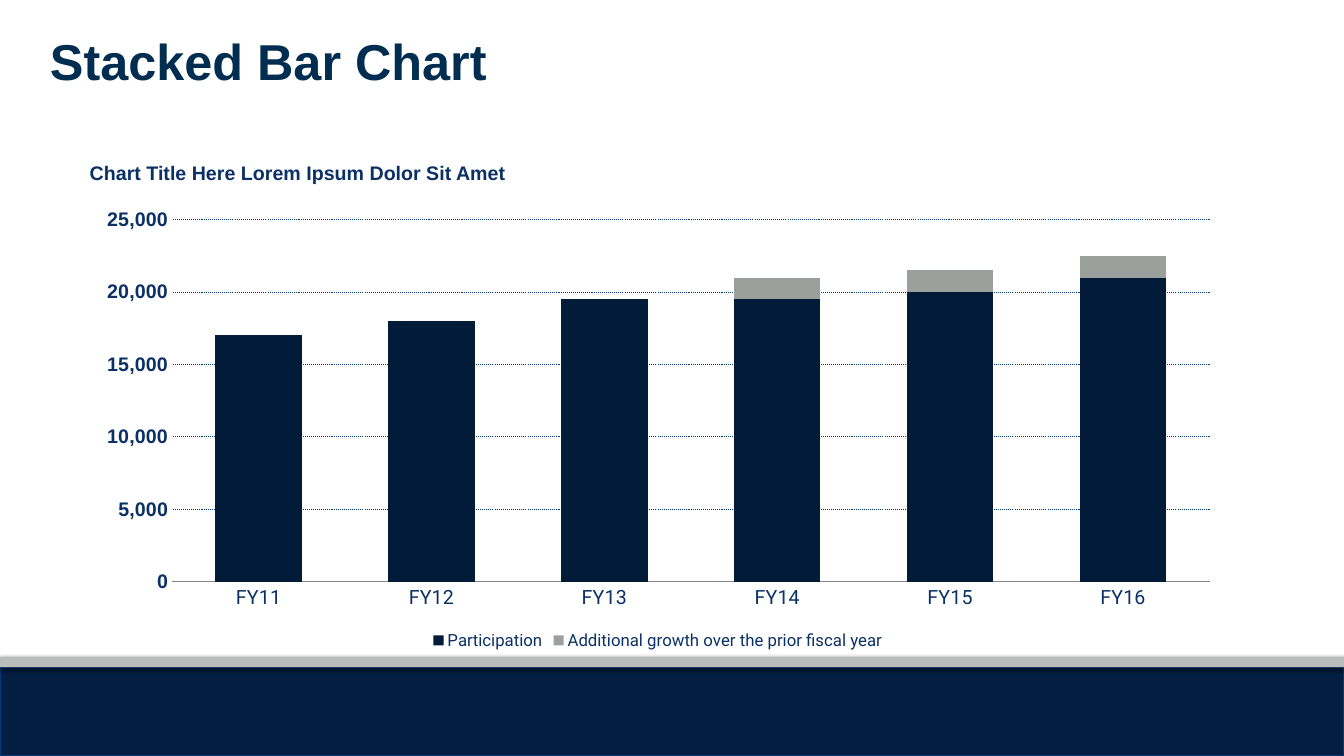
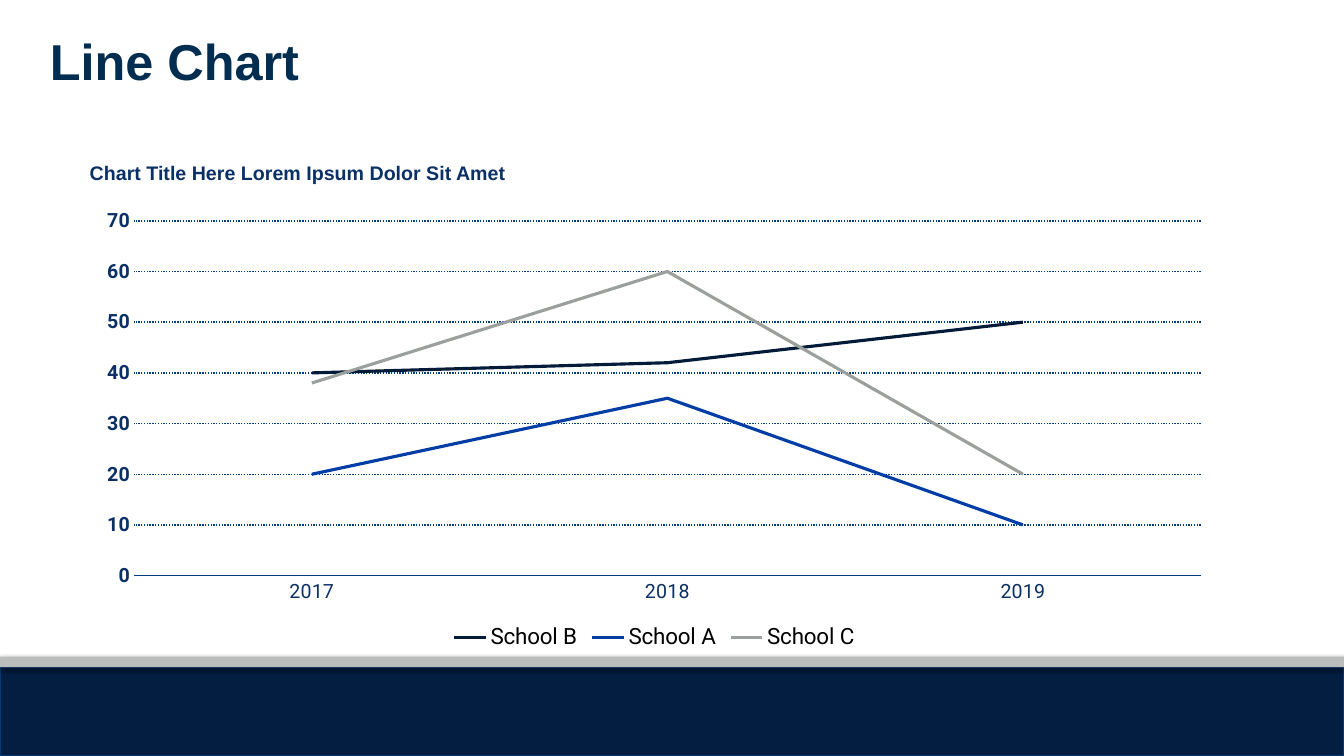
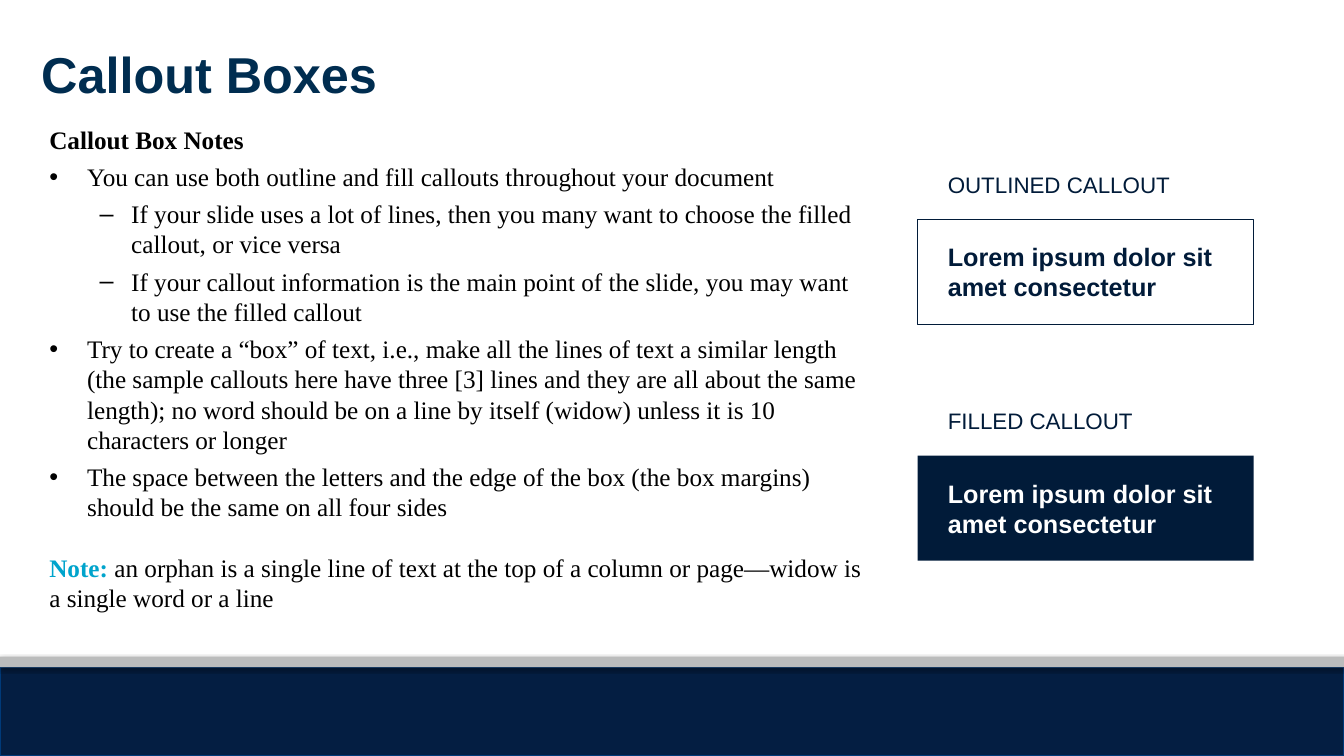
from dataclasses import dataclass, field

from lxml import etree
from pptx import Presentation
from pptx.chart.data import CategoryChartData
from pptx.dml.color import RGBColor
from pptx.enum.chart import XL_CHART_TYPE, XL_LEGEND_POSITION, XL_MARKER_STYLE, XL_TICK_MARK
from pptx.enum.dml import MSO_LINE
from pptx.enum.shapes import MSO_SHAPE
from pptx.enum.text import MSO_ANCHOR, MSO_AUTO_SIZE, PP_ALIGN
from pptx.oxml import parse_xml
from pptx.oxml.ns import nsdecls, qn
from pptx.util import Pt

STACK = XL_CHART_TYPE.COLUMN_STACKED
LINE = XL_CHART_TYPE.LINE
BOTTOM = XL_LEGEND_POSITION.BOTTOM
UNMARKED = XL_MARKER_STYLE.NONE
NO_TICK = XL_TICK_MARK.NONE
DOTS = MSO_LINE.ROUND_DOT
RECT = MSO_SHAPE.RECTANGLE
TOP = MSO_ANCHOR.TOP
MIDDLE = MSO_ANCHOR.MIDDLE
FIXED = MSO_AUTO_SIZE.NONE
LEFT = PP_ALIGN.LEFT

INK = "011B39"
NAVY = "041E42"
EDGE = "003A79"
SILVER = "BBBCBC"
GRAY = "9CA09C"
BLUE = "003DA5"
GRID = "003D81"
LABEL = "0B3066"
BLACK = "000000"
WHITE = "FFFFFF"


@dataclass
class Box:
    left: float
    top: float
    width: float
    height: float

    def place(self) -> tuple:
        return Pt(self.left), Pt(self.top), Pt(self.width), Pt(self.height)


@dataclass
class Look:
    size: float
    face: str
    hue: str
    bold: bool = False


@dataclass
class Band:
    box: Box
    fill: str
    edge: str | None = None


@dataclass
class Series:
    name: str
    vals: tuple
    hue: str


@dataclass
class Graph:
    title: str
    kind: int
    frame: Box
    plot: Box
    cats: tuple
    series: list[Series]
    first: int
    peak: int
    step: int
    base: str
    grid: float
    scale: Look
    legend: Look


@dataclass
class Item:
    text: str
    mark: str = ""
    level: int = 0
    indent: float = 0
    hang: float = 0
    before: float = 0
    look: Look = field(default_factory=lambda: NOTE)


@dataclass
class Callout:
    label: str
    top: float
    fill: str | None
    edge: str | None
    hue: str


HEAD = Look(36, "Arial", "002D50", True)
CAPTION = Look(14, "Arial", LABEL, True)
NOTE = Look(18, "Times New Roman", BLACK)
NOTE_HEAD = Look(18, "Times New Roman", BLACK, True)
NOTE_CUE = Look(18, "Times New Roman", "00A4CC", True)
AXIS = Look(14, "Roboto", LABEL)
HEAD_BOX = Box(28.5, 18, 864, 83)
CAPTION_BOX = Box(57, 111.5, 566.5, 24.5)

BANDS = [
    Band(Box(0, 476.5, 960, 63.5), NAVY, EDGE),
    Band(Box(0, 469, 960, 7.5), SILVER),
]

GRAPHS = [
    Graph(
        "Stacked Bar Chart", STACK, Box(60, 142.5, 820, 325),
        Box(123, 157, 741, 258.5),
        ("FY11", "FY12", "FY13", "FY14", "FY15", "FY16"),
        [
            Series("Participation", (17000, 18000, 19500, 19500, 20000, 21000), INK),
            Series("Additional growth over the prior fiscal year",
                   (None, None, None, 1500, 1500, 1500), GRAY),
        ],
        0, 25000, 5000, "868686", 0.75,
        Look(14, "Arial", LABEL, True), Look(12, "Roboto", LABEL),
    ),
    Graph(
        "Line Chart", LINE, Box(60, 142.5, 814.5, 325),
        Box(95.75, 157.75, 762, 253.5),
        ("2017", "2018", "2019"),
        [
            Series("School A", (20, 35, 10), BLUE),
            Series("School B", (40, 42, 50), INK),
            Series("School C", (38, 60, 20), GRAY),
        ],
        1, 70, 10, GRID, 1,
        Look(14, "Roboto", LABEL, True), Look(16, "Roboto", BLACK),
    ),
]


def bullet(text: str) -> Item:
    return Item(text, "•", 0, 27, -27, 5)


def dash(text: str) -> Item:
    return Item(text, "–", 1, 58.5, -22.5, 5)


ITEMS = [
    Item("Callout Box Notes", look=NOTE_HEAD),
    bullet("You can use both outline and fill callouts throughout your document"),
    dash("If your slide uses a lot of lines, then you many want to choose the filled "
         "callout, or vice versa"),
    dash("If your callout information is the main point of the slide, you may want "
         "to use the filled callout"),
    bullet("Try to create a “box” of text, i.e., make all the lines of text a similar "
           "length (the sample callouts here have three [3] lines and they are all about "
           "the same length); no word should be on a line by itself (widow) unless it is "
           "10 characters or longer"),
    bullet("The space between the letters and the edge of the box (the box margins) "
           "should be the same on all four sides"),
    Item("Note: ", before=21.5, look=NOTE_CUE),
]
NOTE_TAIL = ("an orphan is a single line of text at the top of a column or page—widow is "
             "a single word or a line")

CALLOUTS = [
    Callout("OUTLINED CALLOUT", 113.5, None, INK, INK),
    Callout("FILLED CALLOUT", 282.5, INK, None, WHITE),
]


def tone(code: str) -> RGBColor:
    return RGBColor.from_string(code)


def style(font, look: Look) -> None:
    font.size = Pt(look.size)
    font.name = look.face
    font.bold = look.bold
    font.color.rgb = tone(look.hue)


def settle(shape, box: Box) -> None:
    shape.left, shape.top, shape.width, shape.height = box.place()


def stroke(line, code: str | None, width: float = 0.75) -> None:
    if code is None:
        line.fill.background()
        return
    line.color.rgb = tone(code)
    line.width = Pt(width)


def add_rect(slide, box: Box, fill: str | None, edge: str | None):
    shape = slide.shapes.add_shape(RECT, *box.place())
    shape.shadow.inherit = False
    if fill is None:
        shape.fill.background()
    else:
        shape.fill.solid()
        shape.fill.fore_color.rgb = tone(fill)
    stroke(shape.line, edge)
    return shape


def write(shape, text: str, look: Look, anchor=TOP) -> None:
    frame = shape.text_frame
    frame.word_wrap = True
    frame.auto_size = FIXED
    frame.vertical_anchor = anchor
    frame.text = text
    para = frame.paragraphs[0]
    para.alignment = LEFT
    style(para.runs[0].font, look)


def add_bands(deck, slide) -> None:
    tree = deck.slide_master.shapes.element
    for rank, band in enumerate(BANDS):
        node = add_rect(slide, band.box, band.fill, band.edge).element
        node.nvSpPr.cNvPr.set("id", str(20 + rank))
        glow = node.spPr.find(qn("a:effectLst"))
        glow.append(parse_xml(
            f'<a:outerShdw {nsdecls("a")} blurRad="{Pt(3.1)}" dist="{Pt(1.8)}" '
            'dir="5400000" rotWithShape="0"><a:srgbClr val="000000">'
            '<a:alpha val="35000"/></a:srgbClr></a:outerShdw>'))
        tree.insert(2 + rank, node)


def pin_plot(chart, frame: Box, plot: Box) -> None:
    area = chart.element.find(".//" + qn("c:plotArea"))
    for old in area.findall(qn("c:layout")):
        area.remove(old)
    layout = etree.Element(qn("c:layout"))
    manual = etree.SubElement(layout, qn("c:manualLayout"))
    parts = {
        "layoutTarget": "inner", "xMode": "edge", "yMode": "edge",
        "x": (plot.left - frame.left) / frame.width,
        "y": (plot.top - frame.top) / frame.height,
        "w": plot.width / frame.width,
        "h": plot.height / frame.height,
    }
    for name, value in parts.items():
        etree.SubElement(manual, qn("c:" + name)).set("val", str(value))
    area.insert(0, layout)


def lead_with(chart, rank: int) -> None:
    nodes = list(chart.element.iter(qn("c:ser")))
    if rank:
        nodes[0].addprevious(nodes[rank])


def add_graph(slide, graph: Graph) -> None:
    data = CategoryChartData(number_format="General")
    data.categories = graph.cats
    for row in graph.series:
        data.add_series(row.name, row.vals)
    chart = slide.shapes.add_chart(graph.kind, *graph.frame.place(), data).chart
    style(chart.font, Look(18, "Calibri", BLACK))
    chart.has_title = False
    chart.has_legend = True
    chart.legend.position = BOTTOM
    chart.legend.include_in_layout = False
    style(chart.legend.font, graph.legend)

    for axis, look in ((chart.category_axis, AXIS), (chart.value_axis, graph.scale)):
        axis.major_tick_mark = axis.minor_tick_mark = NO_TICK
        style(axis.tick_labels.font, look)
    stroke(chart.category_axis.format.line, graph.base)
    scale = chart.value_axis
    stroke(scale.format.line, None)
    scale.minimum_scale = 0
    scale.maximum_scale = graph.peak
    scale.major_unit = graph.step
    scale.tick_labels.number_format = "#,##0"
    scale.tick_labels.number_format_is_linked = False
    scale.has_major_gridlines = True
    rule = scale.major_gridlines.format.line
    stroke(rule, GRID, graph.grid)
    rule.dash_style = DOTS

    plot = chart.plots[0]
    plot.vary_by_categories = False
    if graph.kind == STACK:
        plot.gap_width = 100
        plot.overlap = 100
    for drawn, row in zip(plot.series, graph.series):
        if graph.kind == STACK:
            drawn.format.fill.solid()
            drawn.format.fill.fore_color.rgb = tone(row.hue)
        else:
            drawn.smooth = False
            drawn.marker.style = UNMARKED
            stroke(drawn.format.line, row.hue, 2.25)
    lead_with(chart, graph.first)
    pin_plot(chart, graph.frame, graph.plot)


def add_title(slide, text: str, box: Box) -> None:
    title = slide.shapes.title
    settle(title, box)
    write(title, text, HEAD)


def graph_slide(slide, graph: Graph) -> None:
    add_title(slide, graph.title, HEAD_BOX)
    add_graph(slide, graph)
    write(slide.shapes.add_textbox(*CAPTION_BOX.place()),
          "Chart Title Here Lorem Ipsum Dolor Sit Amet", CAPTION)


def format_item(para, item: Item) -> None:
    para.level = item.level
    props = para._p.get_or_add_pPr()
    props.set("marL", str(Pt(item.indent)))
    props.set("indent", str(Pt(item.hang)))
    if item.mark:
        etree.SubElement(props, qn("a:buFont")).set("typeface", "Arial")
        etree.SubElement(props, qn("a:buChar")).set("char", item.mark)
    else:
        etree.SubElement(props, qn("a:buNone"))
    para.space_before = Pt(item.before)
    style(para.runs[0].font, item.look)


def add_notes(slide) -> None:
    body = slide.placeholders[1]
    settle(body, Box(28, 85, 599, 371))
    frame = body.text_frame
    frame.word_wrap = True
    frame.auto_size = FIXED
    frame.vertical_anchor = TOP
    frame.text = "\n".join(item.text for item in ITEMS)
    for para, item in zip(frame.paragraphs, ITEMS):
        format_item(para, item)
    tail = frame.paragraphs[-1].add_run()
    tail.text = NOTE_TAIL
    style(tail.font, NOTE)


def add_callout(slide, call: Callout) -> None:
    label = slide.shapes.add_textbox(*Box(655.5, call.top, 220, 36).place())
    panel = add_rect(slide, Box(655.5, call.top + 43, 240, 75), call.fill, call.edge)
    for shape, text, look in (
        (label, call.label, Look(16, "Arial", INK)),
        (panel, "Lorem ipsum dolor sit amet consectetur",
         Look(18, "Arial", call.hue, True)),
    ):
        write(shape, text, look, MIDDLE)
        frame = shape.text_frame
        frame.margin_left = frame.margin_right = Pt(21.5)
        frame.margin_top = frame.margin_bottom = Pt(18)


def main() -> None:
    deck = Presentation()
    deck.slide_width, deck.slide_height = Pt(960), Pt(540)
    for rank, graph in enumerate(GRAPHS):
        slide = deck.slides.add_slide(deck.slide_layouts[5])
        if rank == 0:
            add_bands(deck, slide)
        graph_slide(slide, graph)
    slide = deck.slides.add_slide(deck.slide_layouts[1])
    add_title(slide, "Callout Boxes", Box(22.25, 27, 911.5, 61))
    add_notes(slide)
    for call in CALLOUTS:
        add_callout(slide, call)
    deck.save("out.pptx")


if __name__ == "__main__":
    main()
